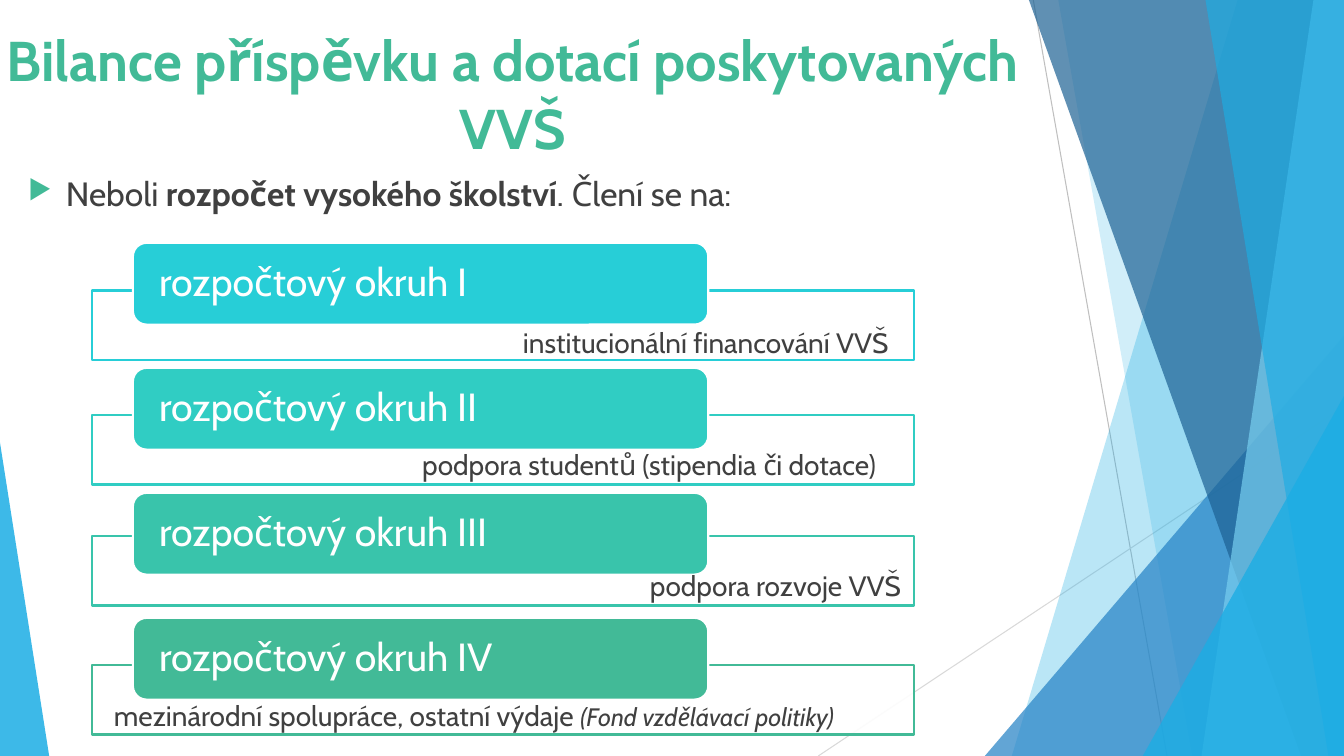
from lxml import etree
from pptx import Presentation
from pptx import util as u
from pptx.dml.color import RGBColor
from pptx.enum import shapes, text
from pptx.oxml.ns import qn

COLORS = {
    "white": "FFFFFF", "body": "404040", "green": "42BA97",
    "sky": "1CADE4", "blue": "2683C6", "navy": "1D6294", "pale": "77CEEF",
    "grey": "BFBFBF", "light_grey": "D9D9D9",
    "area1": "27CED7", "area2": "30CDC3", "area3": "39C4AB", "area4": "42BA97",
}
WIDTH, HEIGHT = 33.87, 19.05


class SlideBuilder:
    font = "Cabin"

    def __init__(self, slide):
        self.shapes = slide.shapes

    def color(self, name):
        return RGBColor.from_string(COLORS[name])

    def box(self, bounds):
        return [u.Cm(length) for length in bounds]

    def style(self, shape, fill, opacity=100, line=None):
        shape.shadow.inherit = False
        shape.fill.solid()
        shape.fill.fore_color.rgb = self.color(fill)
        if opacity < 100:
            solid = shape._element.spPr.find(qn("a:solidFill"))
            etree.SubElement(solid[0], qn("a:alpha"), val=str(opacity * 1000))
        if line:
            shape.line.color.rgb = self.color(line)
            shape.line.width = u.Pt(1.5)
        else:
            shape.line.fill.background()

    def line(self, start, end, color):
        connector = self.shapes.add_connector(
            shapes.MSO_CONNECTOR.STRAIGHT, *self.box(start + end))
        connector.line.color.rgb = self.color(color)
        connector.line.width = u.Pt(0.75)
        etree.SubElement(connector._element.spPr, qn("a:effectLst"))

    def facet(self, top_left, bottom_left, color, opacity):
        outline = self.shapes.build_freeform(u.Cm(top_left), u.Cm(0))
        corners = [(WIDTH, 0), (WIDTH, HEIGHT), (bottom_left, HEIGHT)]
        outline.add_line_segments([self.box(corner) for corner in corners])
        self.style(outline.convert_to_shape(), color, opacity)

    def shape(self, kind, bounds, fill, opacity=100, line=None, adjust=None):
        shape = self.shapes.add_shape(kind, *self.box(bounds))
        self.style(shape, fill, opacity, line)
        if adjust is not None:
            shape.adjustments[0] = adjust
        return shape

    def text_box(self, bounds, runs, align, bullet=False):
        frame = self.shapes.add_textbox(*self.box(bounds)).text_frame
        self.add_runs(frame, runs, align, bullet)

    def add_runs(self, frame, runs, align, bullet=False):
        frame.word_wrap = True
        paragraph = frame.paragraphs[0]
        paragraph.alignment = align
        if bullet:
            props = paragraph._p.get_or_add_pPr()
            indent = u.Cm(0.95)
            props.set("marL", str(indent))
            props.set("indent", str(-indent))
            bullet_color = etree.SubElement(props, qn("a:buClr"))
            etree.SubElement(bullet_color, qn("a:srgbClr"), val=COLORS["green"])
            etree.SubElement(props, qn("a:buSzPct"), val="80000")
            etree.SubElement(props, qn("a:buChar"), char="▶")
        for words, size, color, bold, italic in runs:
            run = paragraph.add_run()
            run.text = words
            run.font.name = self.font
            run.font.size = u.Pt(size)
            run.font.color.rgb = self.color(color)
            run.font.bold = bold
            run.font.italic = italic
        return paragraph

    def area(self, top, frame_top, label, color):
        self.shape(shapes.MSO_SHAPE.RECTANGLE, (2.31, frame_top, 20.73, 1.75),
                   "white", 90, color)
        heading = self.shape(shapes.MSO_SHAPE.ROUNDED_RECTANGLE,
                             (3.35, top, 14.5, 2.06), color, line="white")
        frame = heading.text_frame
        frame.margin_left = frame.margin_right = u.Cm(0.56)
        frame.margin_top = frame.margin_bottom = 0
        frame.vertical_anchor = text.MSO_ANCHOR.MIDDLE
        runs = [(label, 28, "white", False, False)]
        self.add_runs(frame, runs, text.PP_ALIGN.LEFT).line_spacing = 0.9


def main():
    deck = Presentation()
    deck.slide_width, deck.slide_height = u.Cm(WIDTH), u.Cm(HEIGHT)
    builder = SlideBuilder(deck.slides.add_slide(deck.slide_layouts[6]))
    triangle = shapes.MSO_SHAPE.ISOSCELES_TRIANGLE
    justify = text.PP_ALIGN.JUSTIFY

    builder.line((26.04, 0), (29.41, HEIGHT), "grey")
    builder.line((WIDTH, 10.24), (20.62, HEIGHT), "light_grey")
    builder.facet(31.19, 25.5, "sky", 30)
    builder.facet(26.67, 30.05, "sky", 20)
    builder.shape(triangle, (24.82, 8.46, 9.05, 10.59), "blue", 72, adjust=1)
    builder.facet(25.93, 32.79, "navy", 70)
    builder.facet(33.1, 30.28, "pale", 70)
    builder.facet(30.38, 33.48, "sky", 65)
    builder.shape(triangle, (28.8, 9.98, 5.07, 9.07), "sky", 80, adjust=1)
    builder.shape(triangle, (0, 11.15, 1.24, 7.9), "sky", 85, adjust=0)

    builder.text_box(
        (-1.02, 0.53, 27.89, 2.54),
        [("Bilance příspěvku a dotací poskytovaných VVŠ", 40, "green", True, False)],
        text.PP_ALIGN.CENTER)
    builder.text_box(
        (0.46, 4.24, 24.94, 1.73),
        [("Neboli ", 24, "body", False, False),
         ("rozpočet vysokého školství", 24, "body", True, False),
         (". Člení se na:", 24, "body", False, False)],
        justify, bullet=True)

    frame_tops = [7.32, 10.46, 13.51, 16.76]
    for index, (numeral, frame_top) in enumerate(zip(["I", "II", "III", "IV"], frame_tops)):
        builder.area(6.12 + 3.15 * index, frame_top,
                     f"rozpočtový okruh {numeral}", f"area{index + 1}")

    purposes = [
        (12.93, 8.08, 15.01, "institucionální financování VVŠ", ""),
        (10.39, 11.15, 15.01, "podpora studentů (stipendia či dotace)", ""),
        (16.13, 14.2, 15.01, "podpora rozvoje VVŠ", ""),
        (2.62, 17.48, 21.59, "mezinárodní spolupráce, ostatní výdaje ",
         "(Fond vzdělávací politiky)"),
    ]
    for left, top, width, purpose, fund in purposes:
        runs = [(purpose, 20, "body", False, False)]
        if fund:
            runs.append((fund, 18, "body", False, True))
        builder.text_box((left, top, width, 1.73), runs, justify)

    deck.save("out.pptx")


if __name__ == "__main__":
    main()
